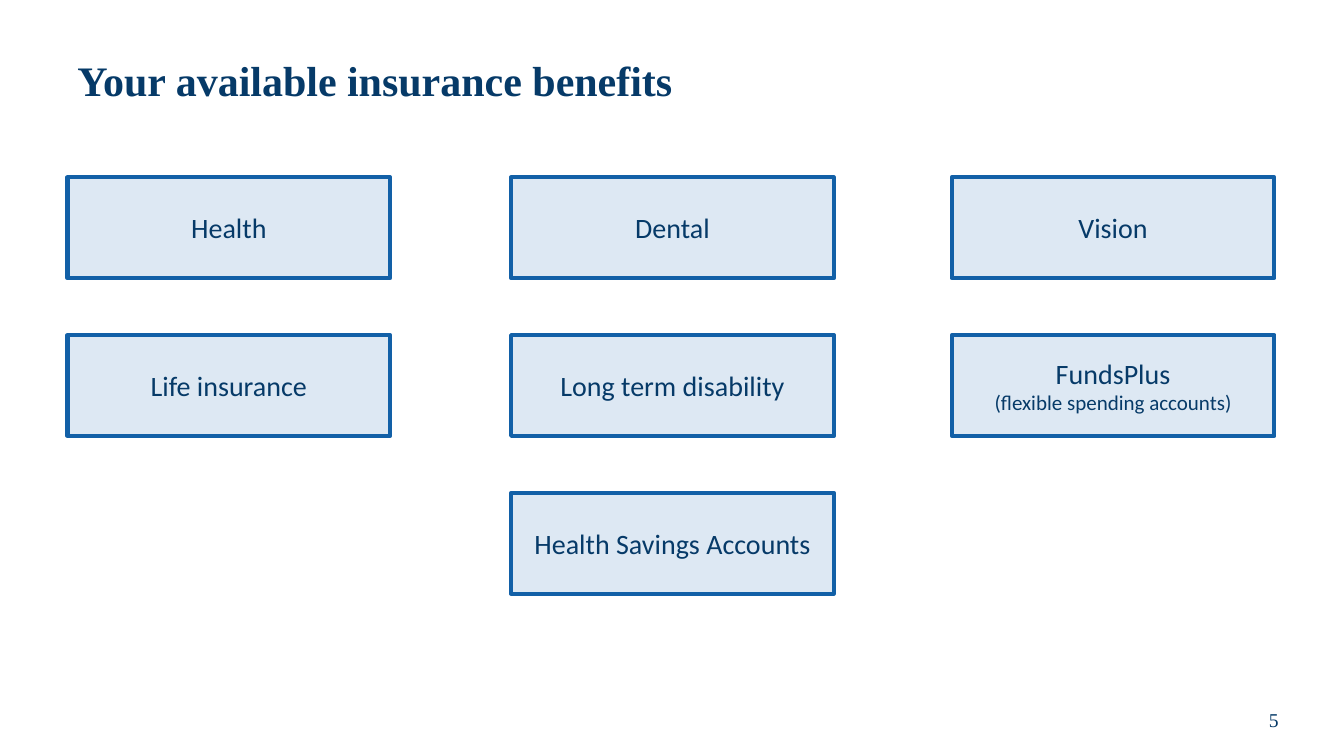
from pptx import Presentation
from pptx.dml.color import RGBColor as RGB
from pptx.enum.shapes import MSO_SHAPE as SHAPE
from pptx.enum.text import MSO_ANCHOR as ANCHOR, PP_ALIGN as ALIGN
from pptx.util import Inches, Pt

COLORS = {"navy": "063A68", "blue": "1260A7", "pale": "DDE8F3"}
SERIF, SANS = "Times New Roman", "Calibri"

deck = Presentation()
deck.slide_width, deck.slide_height = Inches(13.33), Inches(7.5)
slide = deck.slides.add_slide(deck.slide_layouts[6])


def write(shape, text, sizes, font=SANS, bold=False, align=ALIGN.CENTER, space=1.0, inset=0.1):
    """Fill a shape with one paragraph per line, each with its own size."""
    frame = shape.text_frame
    frame.word_wrap = True
    frame.vertical_anchor = ANCHOR.MIDDLE
    frame.margin_top = frame.margin_bottom = Inches(inset)
    for i, (line, size) in enumerate(zip(text.split("\n"), sizes)):
        para = frame.add_paragraph() if i else frame.paragraphs[0]
        para.alignment, para.line_spacing = align, space
        run = para.add_run()
        run.text = line
        run.font.name, run.font.size, run.font.bold = font, Pt(size), bold
        run.font.color.rgb = RGB.from_string(COLORS["navy"])


title = slide.shapes.add_textbox(Inches(0.67), Inches(0.25), Inches(12), Inches(1.15))
write(title, "Your available insurance benefits", [30], font=SERIF, bold=True,
      align=ALIGN.LEFT, space=0.9, inset=0.05)

# Benefit cards, row by row
cols = [0.67, 5.07, 9.44]
top, step = 1.76, 1.565
rows = [
    ["Health", "Dental", "Vision"],
    ["Life insurance", "Long term disability", "FundsPlus\n(flexible spending accounts)"],
    [None, "Health Savings Accounts", None],
]
for r, row in enumerate(rows):
    for left, label in zip(cols, row):
        if not label:
            continue
        card = slide.shapes.add_shape(SHAPE.RECTANGLE, Inches(left), Inches(top + r * step),
                                      Inches(3.2), Inches(1))
        card.shadow.inherit = False
        card.fill.solid()
        card.fill.fore_color.rgb = RGB.from_string(COLORS["pale"])
        card.line.color.rgb = RGB.from_string(COLORS["blue"])
        card.line.width = Pt(3)
        write(card, label, [20, 15])

number = slide.shapes.add_textbox(Inches(12.05), Inches(6.89), Inches(1.17), Inches(0.5))
write(number, "5", [14], font=SERIF, inset=0.05)

deck.save("out.pptx")
